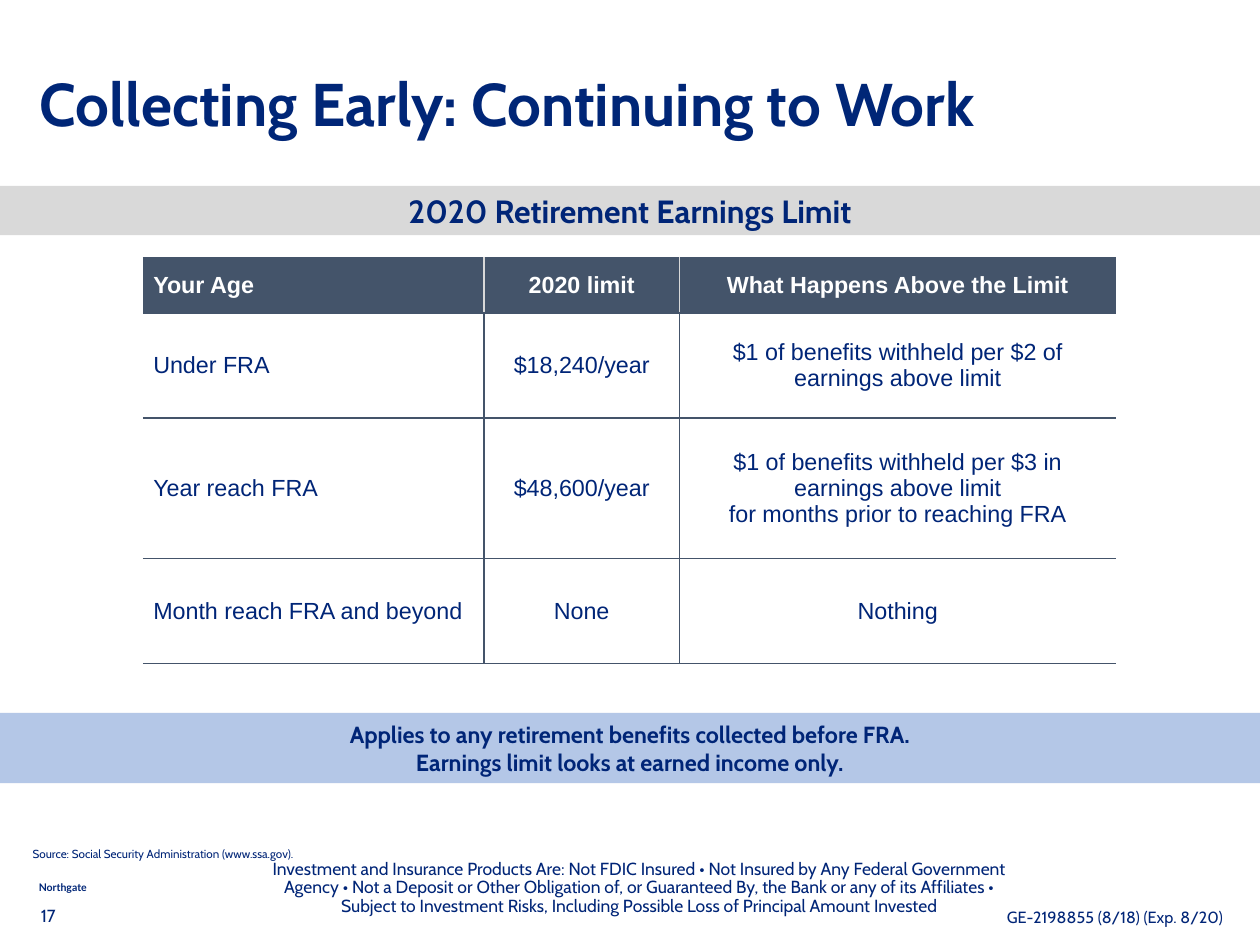
from dataclasses import dataclass

from lxml.etree import SubElement
from pptx import Presentation
from pptx.dml.color import RGBColor
from pptx.enum.shapes import MSO_SHAPE as Preset
from pptx.enum.text import MSO_ANCHOR as Anchor, MSO_AUTO_SIZE as AutoSize, PP_ALIGN as Align
from pptx.oxml.ns import qn
from pptx.util import Inches, Pt

# The slide is a grid of 12 columns by 9 rows, each one inch.
WIDTH, HEIGHT = 12, 9
NAVY, TITLE_NAVY, SLATE = "002577", "002677", "44546A"
GREY, PALE_BLUE, WHITE = "D9D9D9", "B4C7E7", "FFFFFF"

COLUMN_WIDTHS = (3.25, 1.86, 4.16)
ROW_HEIGHTS = (0.53, 1, 1.34, 1)
EARNINGS_LIMITS = (
    ("Your Age", "2020 limit", "What Happens Above the Limit"),
    ("Under FRA", "$18,240/year", "$1 of benefits withheld per $2 of earnings above limit"),
    ("Year reach FRA", "$48,600/year",
     "$1 of benefits withheld per $3 in earnings above limit\vfor months prior to reaching FRA"),
    ("Month reach FRA and beyond", "None", "Nothing"),
)


@dataclass(frozen=True)
class Label:
    lines: tuple[str, ...]
    area: tuple[float, float, float, float]
    size: float
    font: str = "Cabin"
    color: str = NAVY
    bold: bool = False
    align: Align = Align.LEFT
    anchor: Anchor = Anchor.TOP
    spacing: float = 0.9
    insets: tuple[float, float] = (0.1, 0.05)
    fill: str = ""


TITLE = Label(("Collecting Early: Continuing to Work",), (0.28, 0.63, 11.35, 0.77), 41.3,
              color=TITLE_NAVY, bold=True, anchor=Anchor.MIDDLE)
LABELS = (
    Label(("Northgate",), (0.3, 8.33, 1.86, 0.24), 7.2, "Lato", TITLE_NAVY, True,
          anchor=Anchor.MIDDLE, spacing=1, insets=(0.07, 0.04)),
    Label(("17",), (0.29, 8.59, 2.38, 0.3), 12),
    Label(("Investment and Insurance Products Are: Not FDIC Insured • Not Insured by Any Federal "
           "Government Agency • Not a Deposit or Other Obligation of, or Guaranteed By, the Bank "
           "or any of its Affiliates •",
           "Subject to Investment Risks, Including Possible Loss of Principal Amount Invested"),
          (2.4, 8.14, 7.38, 0.79), 12, align=Align.CENTER),
    Label(("GE-2198855 (8/18) (Exp. 8/20)",), (9.49, 8.61, 2.38, 0.3), 11.1),
    Label(("Source: Social Security Administration (www.ssa.gov).",), (0.31, 8.07, 9.01, 0.13), 8,
          anchor=Anchor.BOTTOM, spacing=1, insets=(0, 0)),
    Label(("Applies to any retirement benefits collected before FRA.",
           "Earnings limit looks at earned income only."), (0, 6.79, WIDTH, 0.67), 16,
          bold=True, align=Align.CENTER, anchor=Anchor.MIDDLE, spacing=1, fill=PALE_BLUE),
    Label(("2020 Retirement Earnings Limit",), (0, 1.77, WIDTH, 0.47), 22,
          bold=True, align=Align.CENTER, anchor=Anchor.MIDDLE, spacing=1, fill=GREY),
)


def rgb(color: str) -> RGBColor:
    return RGBColor.from_string(color)


def style_font(font, name: str, size: float, color: str, bold: bool) -> None:
    font.name, font.size, font.bold = name, Pt(size), bold
    font.color.rgb = rgb(color)


def write_label(box, label: Label) -> None:
    box.left, box.top, box.width, box.height = map(Inches, label.area)
    frame = box.text_frame
    frame.word_wrap, frame.auto_size = True, AutoSize.NONE
    frame.vertical_anchor = label.anchor
    side, edge = map(Inches, label.insets)
    frame.margin_left = frame.margin_right = side
    frame.margin_top = frame.margin_bottom = edge
    frame.text = "\n".join(label.lines)
    for para in frame.paragraphs:
        para.alignment, para.line_spacing = label.align, label.spacing
        style_font(para.font, label.font, label.size, label.color, label.bold)


def add_label(slide, label: Label) -> None:
    area = map(Inches, label.area)
    if label.fill:
        box = slide.shapes.add_shape(Preset.RECTANGLE, *area)
        box.shadow.inherit = False
        box.fill.solid()
        box.fill.fore_color.rgb = rgb(label.fill)
        box.line.fill.background()
    else:
        box = slide.shapes.add_textbox(*area)
    write_label(box, label)


def set_borders(cell, colors: dict[str, str]) -> None:
    """Draw one-point borders; an edge with an empty colour gets no line."""
    properties = cell._tc.get_or_add_tcPr()
    for position, edge in enumerate(("lnL", "lnR", "lnT", "lnB")):
        line = properties.makeelement(qn(f"a:{edge}"), {"w": str(Pt(1))})
        properties.insert(position, line)
        color = colors[edge]
        paint = SubElement(line, qn("a:solidFill" if color else "a:noFill"))
        if color:
            SubElement(paint, qn("a:srgbClr"), val=color)


def add_limits_table(slide) -> None:
    area = map(Inches, (1.36, 2.45, sum(COLUMN_WIDTHS), sum(ROW_HEIGHTS)))
    table = slide.shapes.add_table(len(ROW_HEIGHTS), len(COLUMN_WIDTHS), *area).table
    table.horz_banding = False
    for column, width in zip(table.columns, COLUMN_WIDTHS):
        column.width = Inches(width)
    last = len(COLUMN_WIDTHS) - 1
    for row_index, (height, texts) in enumerate(zip(ROW_HEIGHTS, EARNINGS_LIMITS)):
        table.rows[row_index].height = Inches(height)
        header = row_index == 0
        divider = GREY if header else SLATE
        for column_index, text in enumerate(texts):
            cell = table.cell(row_index, column_index)
            cell.vertical_anchor = Anchor.MIDDLE
            if header:
                cell.fill.solid()
                cell.fill.fore_color.rgb = rgb(SLATE)
            else:
                cell.fill.background()
            para = cell.text_frame.paragraphs[0]
            para.text = text
            para.alignment = Align.CENTER if column_index else Align.LEFT
            style_font(para.font, "Arial", 16, WHITE if header else NAVY, header)
            set_borders(cell, {
                "lnL": divider if column_index else "",
                "lnR": divider if column_index < last else "",
                "lnT": SLATE, "lnB": SLATE,
            })


def main() -> None:
    deck = Presentation()
    deck.slide_width, deck.slide_height = Inches(WIDTH), Inches(HEIGHT)
    slide = deck.slides.add_slide(deck.slide_layouts.get_by_name("Title Only"))
    write_label(slide.shapes.title, TITLE)
    add_limits_table(slide)
    for label in LABELS:
        add_label(slide, label)
    deck.save("out.pptx")


if __name__ == "__main__":
    main()
